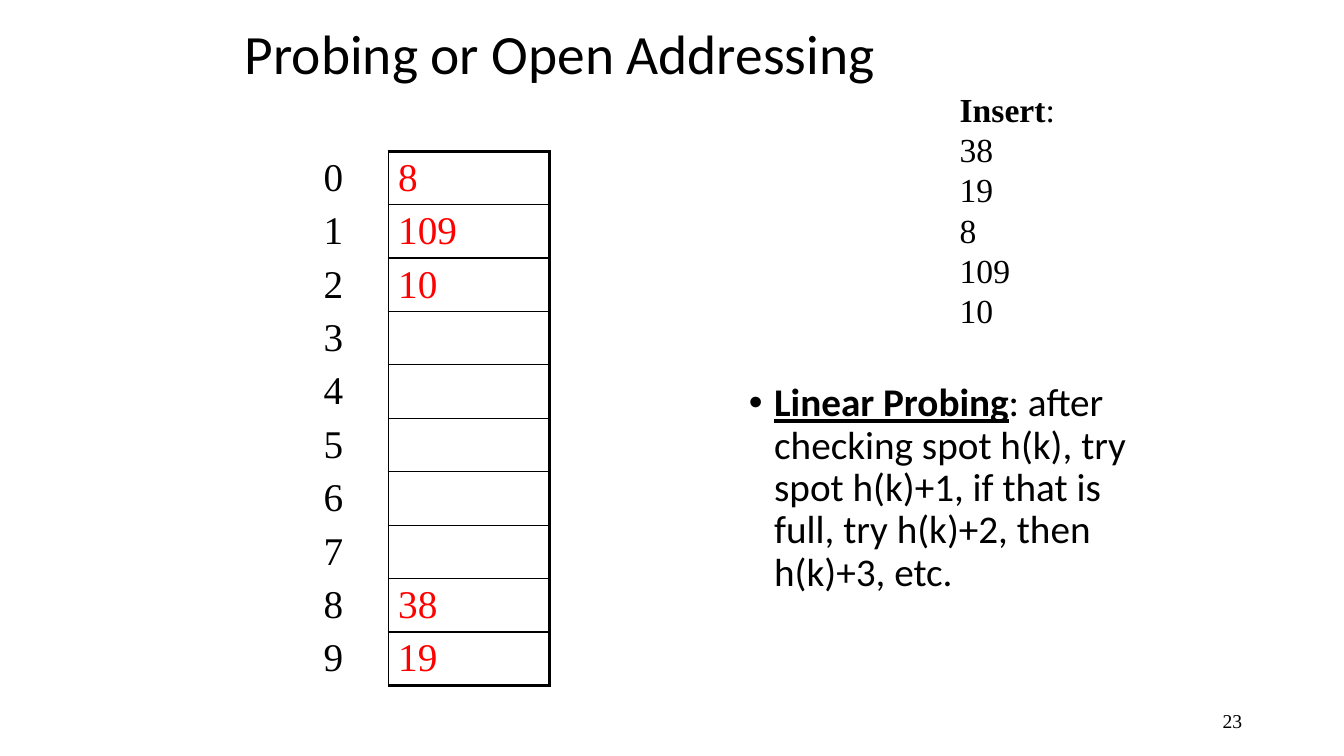
from dataclasses import dataclass

from lxml.etree import SubElement
from pptx import Presentation
from pptx.dml.color import RGBColor
from pptx.enum.text import MSO_ANCHOR, PP_ALIGN
from pptx.oxml.ns import qn
from pptx.util import Emu, Pt

BLACK = RGBColor(0, 0, 0)
RED = RGBColor(255, 0, 0)
SANS = "Calibri"
SERIF = "Times New Roman"
EMU_PER_PX = 9144  # 100 px to the inch
THIN, THICK = 1, 2.25
TABLE_SIZE = 10
ROW_HEIGHT = 53
COLUMN_WIDTHS = (74, 160)


@dataclass(frozen=True)
class Span:
    text: str
    bold: bool = False
    underline: bool = False


@dataclass(frozen=True)
class Frame:
    left: int
    top: int
    width: int
    height: int

    def emu(self) -> tuple[Emu, ...]:
        return tuple(px(n) for n in (self.left, self.top, self.width, self.height))


HASH_TABLE = {0: "8", 1: "109", 2: "10", 8: "38", 9: "19"}
INSERTED = ("38", "19", "8", "109", "10")


def px(length: int) -> Emu:
    return Emu(length * EMU_PER_PX)


def write_spans(para, spans: list[Span], *, size: float, font: str,
                color: RGBColor = BLACK, align=PP_ALIGN.LEFT,
                line_spacing: float = 1.0, space_before: float = 0) -> None:
    para.alignment = align
    para.line_spacing = line_spacing
    para.space_before = Pt(space_before)
    for span in spans:
        run = para.add_run()
        run.text = span.text
        run.font.size = Pt(size)
        run.font.name = font
        run.font.bold = span.bold
        run.font.underline = span.underline
        run.font.color.rgb = color


def add_text(page, frame: Frame, paragraphs: list[list[Span]], *,
             anchor=MSO_ANCHOR.TOP, **text_format):
    box = page.shapes.add_textbox(*frame.emu())
    text_frame = box.text_frame
    text_frame.word_wrap = True
    text_frame.vertical_anchor = anchor
    for index, spans in enumerate(paragraphs):
        para = text_frame.add_paragraph() if index else text_frame.paragraphs[0]
        write_spans(para, spans, **text_format)
    return box


def add_bullet(para, indent: int) -> None:
    properties = para._p.get_or_add_pPr()
    properties.set("marL", str(px(indent)))
    properties.set("indent", str(-px(indent)))
    SubElement(properties, qn("a:buFont"), typeface="Arial")
    SubElement(properties, qn("a:buChar"), char="•")


def set_borders(cell, **widths: float) -> None:
    """Draw black borders; sides are given in the order L, R, T, B."""
    properties = cell._tc.get_or_add_tcPr()
    for side, width in widths.items():
        line = SubElement(properties, qn(f"a:ln{side}"), w=str(Pt(width)))
        fill = SubElement(line, qn("a:solidFill"))
        SubElement(fill, qn("a:srgbClr"), val=str(BLACK))


def fill_cell(cell, text: str, color: RGBColor) -> None:
    cell.fill.background()
    cell.margin_top = cell.margin_bottom = 0
    cell.vertical_anchor = MSO_ANCHOR.MIDDLE
    if text:
        write_spans(cell.text_frame.paragraphs[0], [Span(text)],
                    size=28, font=SERIF, color=color)


def add_hash_table(page, left: int, top: int) -> None:
    frame = Frame(left, top, sum(COLUMN_WIDTHS), TABLE_SIZE * ROW_HEIGHT)
    table = page.shapes.add_table(TABLE_SIZE, len(COLUMN_WIDTHS), *frame.emu()).table
    table.first_row = table.horz_banding = False
    for column, width in zip(table.columns, COLUMN_WIDTHS):
        column.width = px(width)
    for index in range(TABLE_SIZE):
        table.rows[index].height = px(ROW_HEIGHT)
        label, slot = table.cell(index, 0), table.cell(index, 1)
        set_borders(label, R=THIN)
        set_borders(slot, L=THIN, R=THICK,
                    T=THICK if index == 0 else THIN,
                    B=THICK if index == TABLE_SIZE - 1 else THIN)
        fill_cell(label, str(index), BLACK)
        fill_cell(slot, HASH_TABLE.get(index, ""), RED)


def main() -> None:
    deck = Presentation()
    deck.slide_width, deck.slide_height = px(1333), px(750)
    page = deck.slides.add_slide(deck.slide_layouts[6])

    add_text(page, Frame(942, 695, 300, 40), [[Span("23")]], size=14, font=SERIF,
             align=PP_ALIGN.RIGHT, anchor=MSO_ANCHOR.MIDDLE)
    add_text(page, Frame(233, 19, 850, 75), [[Span("Probing or Open Addressing")]],
             size=39.6, font=SANS, line_spacing=0.9, anchor=MSO_ANCHOR.MIDDLE)
    add_hash_table(page, 311, 150)
    add_text(page, Frame(942, 83, 136, 252),
             [[Span("Insert", bold=True), Span(":")], *([Span(key)] for key in INSERTED)],
             size=24, font=SERIF)
    rule = add_text(
        page, Frame(733, 375, 408, 300),
        [[Span("Linear Probing", bold=True, underline=True),
          Span(": after checking spot h(k), try spot h(k)+1, if that is full, "
               "try h(k)+2, then h(k)+3, etc.")]],
        size=28, font=SANS, line_spacing=0.9, space_before=10)
    add_bullet(rule.text_frame.paragraphs[0], 25)

    deck.save("out.pptx")


if __name__ == "__main__":
    main()
